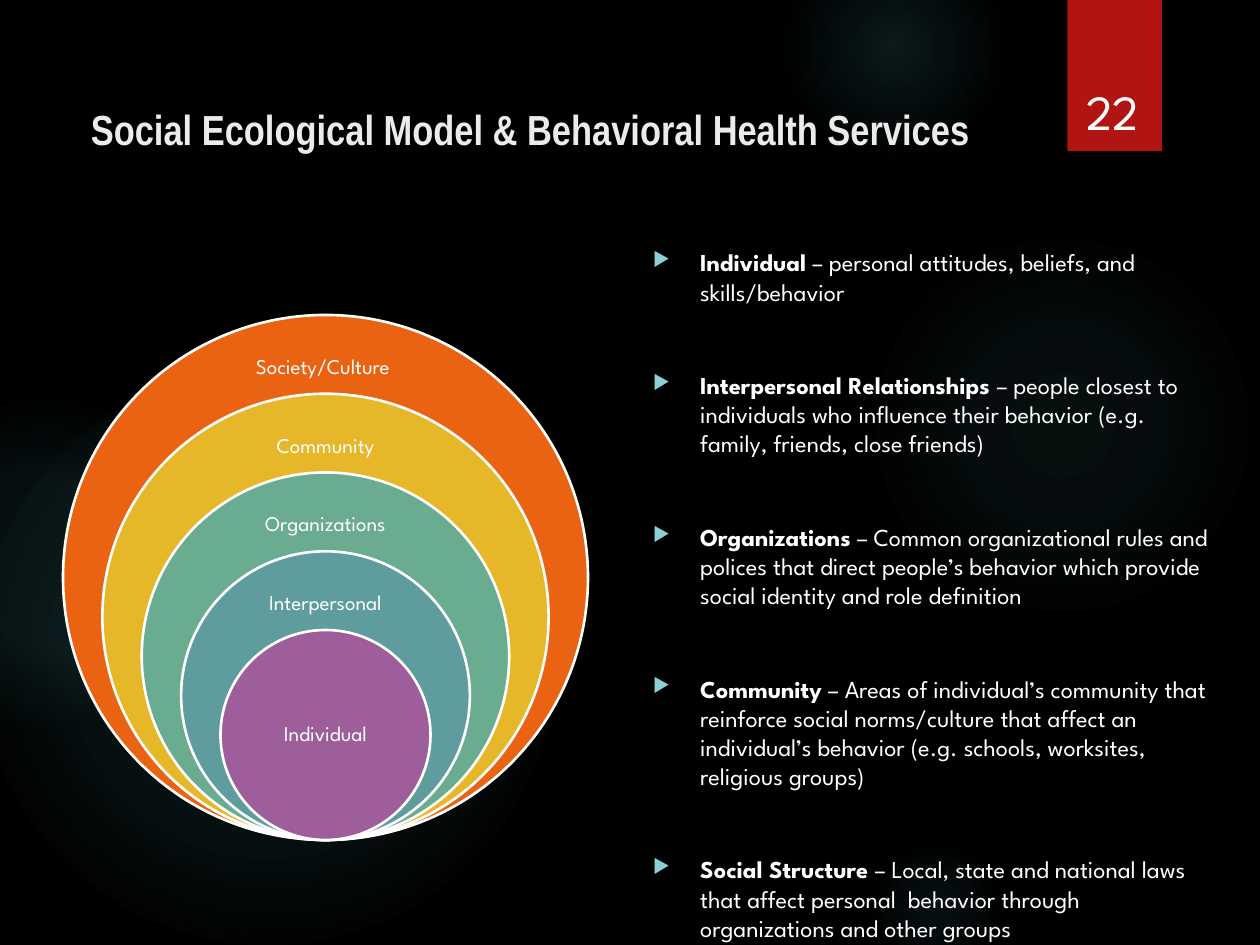
import pptx
import pptx.util
import pptx.oxml
import pptx.dml.color
import pptx.enum.shapes
import pptx.enum.text

Pt = pptx.util.Pt
ALIGN = pptx.enum.text.PP_ALIGN
ANCHOR = pptx.enum.text.MSO_ANCHOR
SHAPE = pptx.enum.shapes.MSO_SHAPE
NS = 'xmlns:a="http://schemas.openxmlformats.org/drawingml/2006/main"'
FONT = "League Spartan"
COLORS = {
    "black": "000000", "white": "FFFFFF", "title": "EBEBEB", "ribbon": "B01513",
    "glow": "50B9C1", "bullet": "8AD0D6", "society": "EA6312",
    "community": "E6B729", "organizations": "6AAC90",
    "interpersonal": "5F9C9D", "individual": "9E5E9B",
}
GLOWS = [
    (496, 132, 222, ((0, 7), (36, 6), (69, 0))),
    (448, -36, 126, ((0, 14), (36, 7), (73, 0))),
    (496, 480, 78, ((0, 9), (36, 5), (66, 0))),
    (-12, 210, 330, ((0, 11), (36, 10), (75, 0))),
    (-66, 228, 186, ((0, 8), (36, 8), (72, 0))),
]
RINGS = [
    ("Society/Culture ", "society", 112),
    ("Community", "community", 110),
    ("Organizations", "organizations", 109),
    ("Interpersonal", "interpersonal", 89),
    ("Individual", "individual", 85),
]
LEVELS = [
    ("Individual", " – personal attitudes, beliefs, and skills/behavior"),
    ("Interpersonal Relationships ", "– people closest to individuals who influence "
     "their behavior (e.g. family, friends, close friends)"),
    ("Organizations", " – Common organizational rules and polices that direct people’s "
     "behavior which provide social identity and role definition"),
    ("Community", " – Areas of individual’s community that reinforce social norms/culture "
     "that affect an individual’s behavior (e.g. schools, worksites, religious groups)"),
    ("Social Structure ", "– Local, state and national laws that affect personal  behavior "
     "through organizations and other groups"),
]


class Painter:
    """Draws styled elements on the current slide."""

    def __init__(self, page):
        self.page = page
        self.target = page.shapes
        page.background.fill.solid()
        page.background.fill.fore_color.rgb = self.rgb("black")

    def rgb(self, name):
        return pptx.dml.color.RGBColor.from_string(COLORS[name])

    def group(self):
        self.target = self.page.shapes.add_group_shape().shapes

    def ungroup(self):
        self.target = self.page.shapes

    def shape(self, kind, left, top, width, height, fill=None, line=None):
        box = self.target.add_shape(kind, Pt(left), Pt(top), Pt(width), Pt(height))
        box.shadow.inherit = False
        if fill:
            box.fill.solid()
            box.fill.fore_color.rgb = self.rgb(fill)
        if line:
            box.line.color.rgb = self.rgb(line)
            box.line.width = Pt(1.5)
        else:
            box.line.fill.background()
        return box

    def glow(self, left, top, size, stops):
        box = self.shape(SHAPE.OVAL, left, top, size, size)
        marks = "".join(
            f'<a:gs pos="{place * 1000}"><a:srgbClr val="{COLORS["glow"]}">'
            f'<a:alpha val="{alpha * 1000}"/></a:srgbClr></a:gs>'
            for place, alpha in stops)
        box._element.spPr.insert(2, pptx.oxml.parse_xml(
            f'<a:gradFill {NS}><a:gsLst>{marks}</a:gsLst><a:path path="circle">'
            '<a:fillToRect l="50000" t="50000" r="50000" b="50000"/>'
            '</a:path></a:gradFill>'))

    def style(self, span, size, color="white", bold=False, font=FONT):
        span.font.name = font
        span.font.size = Pt(size)
        span.font.bold = bold
        span.font.color.rgb = self.rgb(color)

    def frame(self, left, top, width, height, anchor):
        box = self.target.add_textbox(Pt(left), Pt(top), Pt(width), Pt(height))
        box.text_frame.word_wrap = True
        box.text_frame.vertical_anchor = anchor
        return box.text_frame

    def label(self, text, left, top, width, height, anchor, size, **look):
        frame = self.frame(left, top, width, height, anchor)
        frame.text = text
        para = frame.paragraphs[0]
        para.alignment = ALIGN.CENTER
        self.style(para.runs[0], size, **look)
        return frame

    def ring_label(self, text, left, top, width, height):
        frame = self.label(text, left, top, width, height, ANCHOR.MIDDLE, 12)
        frame.margin_left = frame.margin_right = Pt(6.4)
        frame.margin_top = frame.margin_bottom = Pt(6.4)
        frame.paragraphs[0].line_spacing = 0.9

    def bullets(self, items, left, top, width, height):
        frame = self.frame(left, top, width, height, ANCHOR.TOP)
        for index, (term, meaning) in enumerate(items):
            para = frame.add_paragraph() if index else frame.paragraphs[0]
            para.space_before = Pt(36.7 if index else 0)
            for text, bold in ((term, True), (meaning, False)):
                span = para.add_run()
                span.text = text
                self.style(span, 13.9, bold=bold)
            props = para._p.get_or_add_pPr()
            props.set("marL", str(Pt(27)))
            props.set("indent", str(-Pt(27)))
            for mark in (
                f'<a:buClr {NS}><a:srgbClr val="{COLORS["bullet"]}"/></a:buClr>',
                f'<a:buSzPct {NS} val="80000"/>',
                f'<a:buChar {NS} char="▶"/>',
            ):
                props.append(pptx.oxml.parse_xml(mark))


def main():
    deck = pptx.Presentation()
    deck.slide_width, deck.slide_height = Pt(720), Pt(540)
    painter = Painter(deck.slides.add_slide(deck.slide_layouts[6]))

    for glow in GLOWS:
        painter.glow(*glow)
    painter.shape(SHAPE.RECTANGLE, 610, 0, 54, 86.4, fill="ribbon")
    painter.label("Social Ecological Model & Behavioral Health Services", 36, 55.5, 534, 52.5,
                  ANCHOR.TOP, 24, color="title", bold=True, font="Arial Narrow")

    painter.group()
    center, first_top, bottom, step = 186, 180, 480, 45
    for index, (text, color, width) in enumerate(RINGS):
        top = first_top + step * index
        size = bottom - top
        painter.shape(SHAPE.OVAL, center - size / 2, top, size, size, color, "white")
        innermost = index == len(RINGS) - 1
        offset, height = (size / 4, size / 2) if innermost else (15, 30)
        painter.ring_label(text, center - width / 2, top + offset, width, height)
    painter.ungroup()

    painter.bullets(LEVELS, 366, 138, 336, 384)
    painter.label("22", 611, 23, 50, 60.5, ANCHOR.BOTTOM, 28)
    deck.save("out.pptx")


if __name__ == "__main__":
    main()
